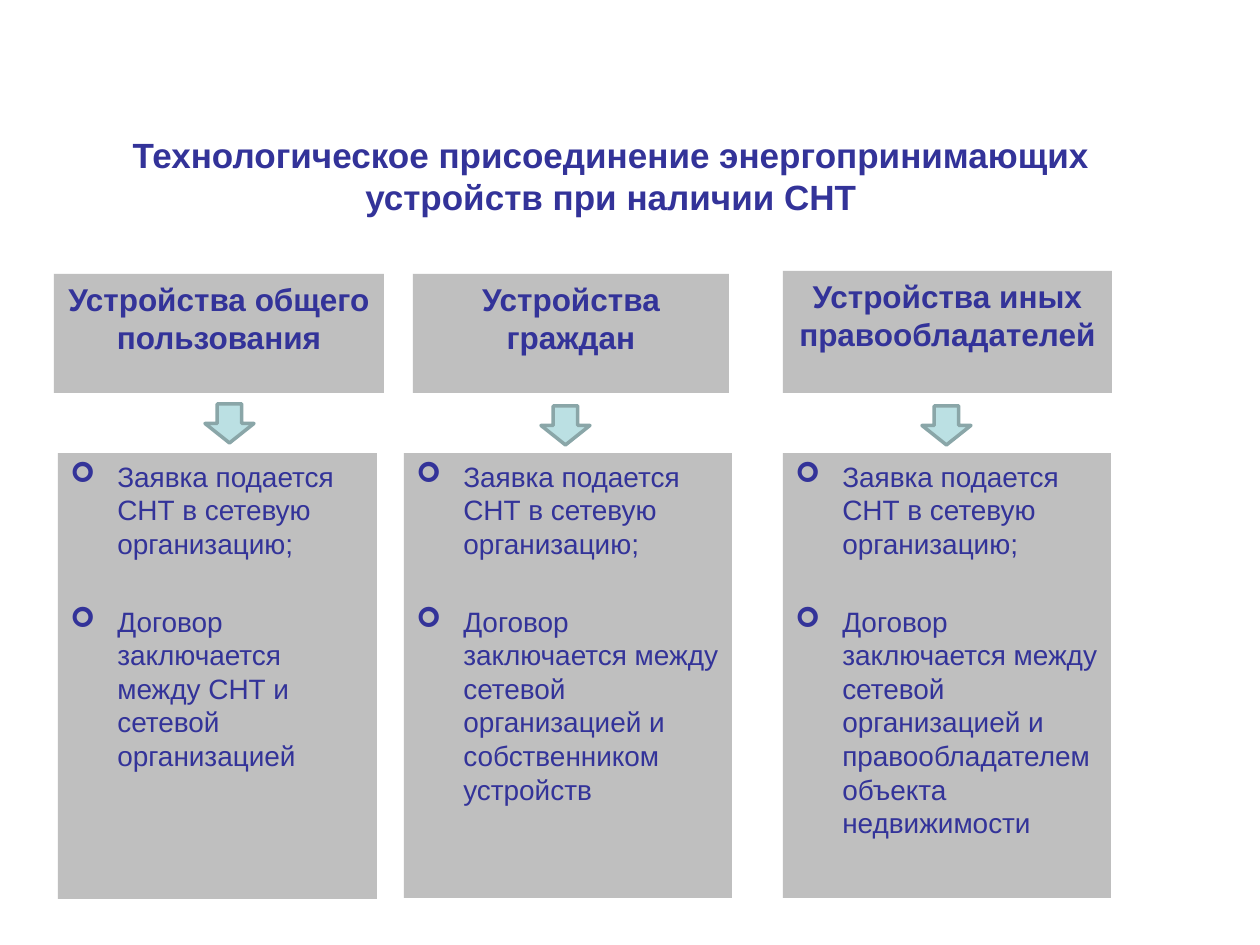
from lxml import etree
from pptx import Presentation
from pptx.dml.color import RGBColor
from pptx.enum.shapes import MSO_SHAPE
from pptx.enum.text import MSO_ANCHOR, PP_ALIGN
from pptx.oxml.ns import qn
from pptx.util import Emu, Pt

PX_PER_INCH = 126
FONT = "Arial"
INK = "333399"
PANEL = "BFBFBF"
ARROW_FILL = "BBE0E3"
ARROW_LINE = "8AA6A8"
BULLET_INDENT = 47
ITEM_GAP = 25.3  # points between bullet items

TITLE = "Технологическое присоединение энергопринимающих устройств при наличии СНТ"
REQUEST = "Заявка подается СНТ в сетевую организацию;"

# Each column: heading and its box, arrow corner, contract text and panel box
COLUMNS = [
    ("Устройства общего пользования", (54, 274, 330, 119), (205, 404),
     "Договор заключается между СНТ и сетевой организацией",
     (58, 453, 319, 446)),
    ("Устройства граждан", (413, 274, 316, 119), (541, 406),
     "Договор заключается между сетевой организацией и собственником устройств",
     (404, 453, 328, 445)),
    ("Устройства иных правообладателей", (783, 271, 329, 122), (922, 406),
     "Договор заключается между сетевой организацией и "
     "правообладателем объекта недвижимости",
     (783, 453, 328, 445)),
]


def px(length):
    return Emu(round(length * 914400 / PX_PER_INCH))


def color(hex_string):
    return RGBColor.from_string(hex_string)


def style_paragraph(para, size, bold=False, align=PP_ALIGN.LEFT):
    para.alignment = align
    para.font.name = FONT
    para.font.size = Pt(size)
    para.font.bold = bold
    para.font.color.rgb = color(INK)


def add_bullet(para):
    properties = para._p.get_or_add_pPr()
    properties.set("marL", str(px(BULLET_INDENT)))
    properties.set("indent", str(-px(BULLET_INDENT)))
    etree.SubElement(properties, qn("a:buFont"), typeface="Wingdings")
    etree.SubElement(properties, qn("a:buChar"), char="➢")


def add_filled_shape(page, kind, box, fill):
    shape = page.shapes.add_shape(kind, *map(px, box))
    shape.shadow.inherit = False
    shape.fill.solid()
    shape.fill.fore_color.rgb = color(fill)
    shape.line.fill.background()
    shape.text_frame.word_wrap = True
    shape.text_frame.vertical_anchor = MSO_ANCHOR.TOP
    return shape


def add_title(page):
    title = page.shapes.add_textbox(*map(px, (44, 96, 1134, 158)))
    frame = title.text_frame
    frame.word_wrap = True
    frame.vertical_anchor = MSO_ANCHOR.MIDDLE
    frame.text = TITLE
    style_paragraph(frame.paragraphs[0], 20, True, PP_ALIGN.CENTER)


def add_heading(page, text, box):
    frame = add_filled_shape(page, MSO_SHAPE.RECTANGLE, box, PANEL).text_frame
    frame.text = text
    style_paragraph(frame.paragraphs[0], 18, True, PP_ALIGN.CENTER)


def add_arrow(page, corner):
    arrow = add_filled_shape(page, MSO_SHAPE.DOWN_ARROW, (*corner, 49, 39), ARROW_FILL)
    arrow.line.color.rgb = color(ARROW_LINE)
    arrow.line.width = Pt(2)


def add_bullet_panel(page, items, box):
    frame = add_filled_shape(page, MSO_SHAPE.RECTANGLE, box, PANEL).text_frame
    frame.text = "\n".join(items)
    for index, para in enumerate(frame.paragraphs):
        add_bullet(para)
        style_paragraph(para, 16)
        if index:
            para.space_before = Pt(ITEM_GAP)


def main():
    deck = Presentation()
    deck.slide_width, deck.slide_height = px(1260), px(945)
    page = deck.slides.add_slide(deck.slide_layouts[6])

    add_title(page)
    for heading, heading_box, arrow_corner, contract, panel_box in COLUMNS:
        add_heading(page, heading, heading_box)
        add_arrow(page, arrow_corner)
        add_bullet_panel(page, [REQUEST, contract], panel_box)

    deck.save("out.pptx")


if __name__ == "__main__":
    main()
